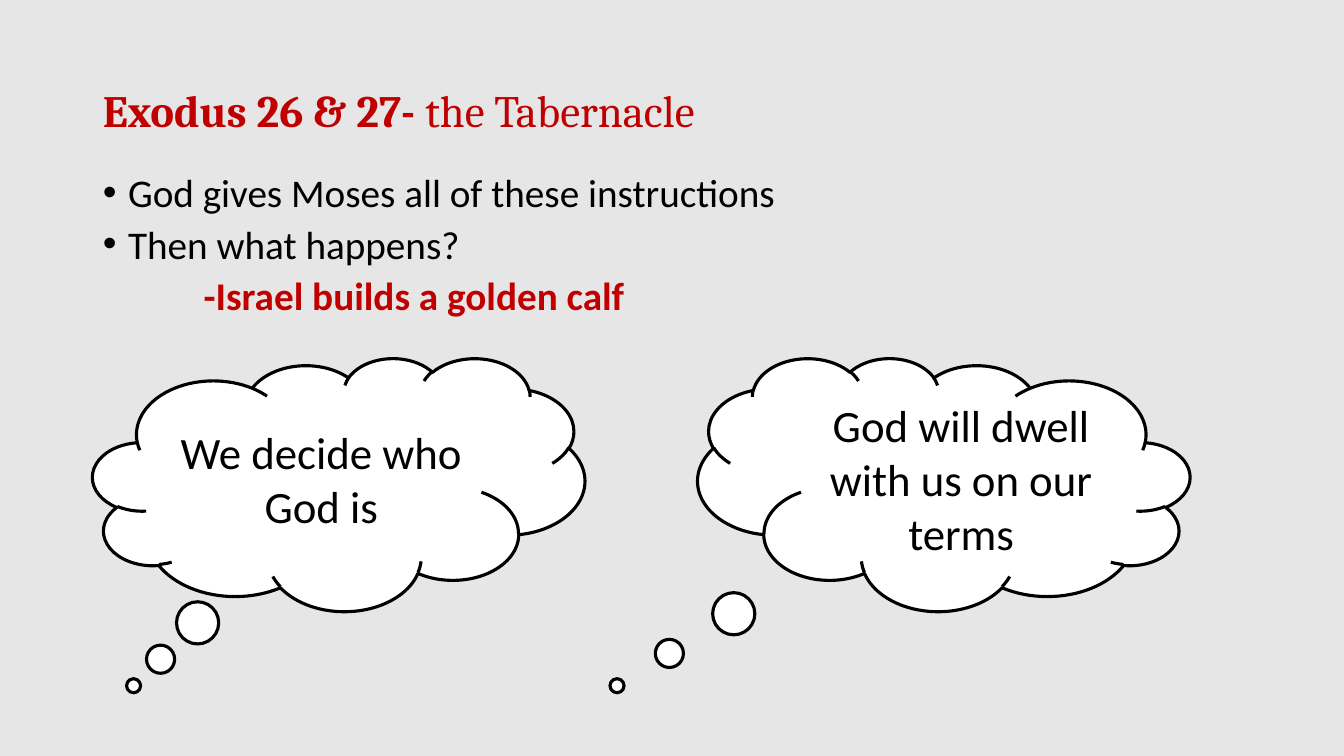
from dataclasses import dataclass

from pptx import Presentation
from pptx.dml.color import RGBColor
from pptx.enum.shapes import MSO_SHAPE
from pptx.enum.text import MSO_ANCHOR, MSO_AUTO_SIZE, PP_ALIGN
from pptx.oxml.ns import qn
from pptx.oxml.xmlchemy import OxmlElement
from pptx.util import Inches, Pt

BLACK, RED, WHITE, GREY = "000000", "C00000", "FFFFFF", "E7E6E6"


@dataclass
class Thought:
    text: str
    left: float
    tail: tuple[float, float]
    mirrored: bool


@dataclass
class Line:
    text: str
    indent: float
    bulleted: bool
    color: str
    bold: bool


THOUGHTS = [
    Thought("We decide who God is", 0.92, (-0.417, 0.796), False),
    Thought("God will dwell with us on our terms", 6.92, (0.664, 0.796), True),
]
LINES = [
    Line("God gives Moses all of these instructions", 0.25, True, BLACK, False),
    Line("Then what happens?", 0.25, True, BLACK, False),
    Line("-Israel builds a golden calf", 1, False, RED, True),
]


def rgb(color: str) -> RGBColor:
    return RGBColor.from_string(color)


def assign(target, values: dict) -> None:
    """Set each named attribute on the target."""
    for name, value in values.items():
        setattr(target, name, value)


def place(shape, left: float, top: float, width: float, height: float) -> None:
    assign(shape, {"left": Inches(left), "top": Inches(top),
                   "width": Inches(width), "height": Inches(height)})


def add_span(para, text: str, size: float, color: str,
             bold: bool = False, font: str = "Calibri") -> None:
    span = para.add_run()
    span.text = text
    assign(span.font, {"name": font, "size": Pt(size), "bold": bold})
    span.font.color.rgb = rgb(color)


def set_bullet(para, indent: float, bulleted: bool) -> None:
    properties = para._p.get_or_add_pPr()
    properties.set("marL", str(Inches(indent)))
    properties.set("indent", str(Inches(-0.25 if bulleted else 0)))
    if bulleted:
        font = OxmlElement("a:buFont")
        font.set("typeface", "Arial")
        bullet = OxmlElement("a:buChar")
        bullet.set("char", "•")
        properties.extend([font, bullet])
    else:
        properties.append(OxmlElement("a:buNone"))


def fill_title(title) -> None:
    place(title, 0.92, 0.4, 11.5, 1.45)
    assign(title.text_frame, {"vertical_anchor": MSO_ANCHOR.MIDDLE,
                              "auto_size": MSO_AUTO_SIZE.NONE})
    para = title.text_frame.paragraphs[0]
    assign(para, {"alignment": PP_ALIGN.LEFT, "line_spacing": 0.9})
    add_span(para, "Exodus 26 & 27- ", 32, RED, True, "Cambria")
    add_span(para, "the Tabernacle", 32, RED, False, "Cambria")


def fill_body(body) -> None:
    place(body, 0.92, 1.71, 11.5, 2.04)
    frame = body.text_frame
    frame.auto_size = MSO_AUTO_SIZE.NONE
    for index, line in enumerate(LINES):
        para = frame.add_paragraph() if index else frame.paragraphs[0]
        assign(para, {"line_spacing": 0.8, "space_before": Pt(10)})
        set_bullet(para, line.indent, line.bulleted)
        add_span(para, line.text, 28, line.color, line.bold)


def add_thought(page, thought: Thought) -> None:
    cloud = page.shapes.add_shape(MSO_SHAPE.CLOUD_CALLOUT, 0, 0, 0, 0)
    place(cloud, thought.left, 3.55, 4.88, 2.51)
    for index, offset in enumerate(thought.tail):
        cloud.adjustments[index] = offset
    if thought.mirrored:
        cloud._element.spPr.find(qn("a:xfrm")).set("flipH", "1")
    cloud.shadow.inherit = False
    cloud.fill.solid()
    cloud.fill.fore_color.rgb = rgb(WHITE)
    cloud.line.color.rgb = rgb(BLACK)
    cloud.line.width = Pt(2.25)
    assign(cloud.text_frame, {"word_wrap": True, "vertical_anchor": MSO_ANCHOR.MIDDLE})
    para = cloud.text_frame.paragraphs[0]
    para.alignment = PP_ALIGN.CENTER
    add_span(para, thought.text, 32, BLACK)


def main() -> None:
    deck = Presentation()
    assign(deck, {"slide_width": Inches(13.33), "slide_height": Inches(7.5)})
    page = deck.slides.add_slide(deck.slide_layouts[1])
    page.background.fill.solid()
    page.background.fill.fore_color.rgb = rgb(GREY)
    fill_title(page.shapes.title)
    fill_body(page.placeholders[1])
    for thought in THOUGHTS:
        add_thought(page, thought)
    deck.save("out.pptx")


if __name__ == "__main__":
    main()
